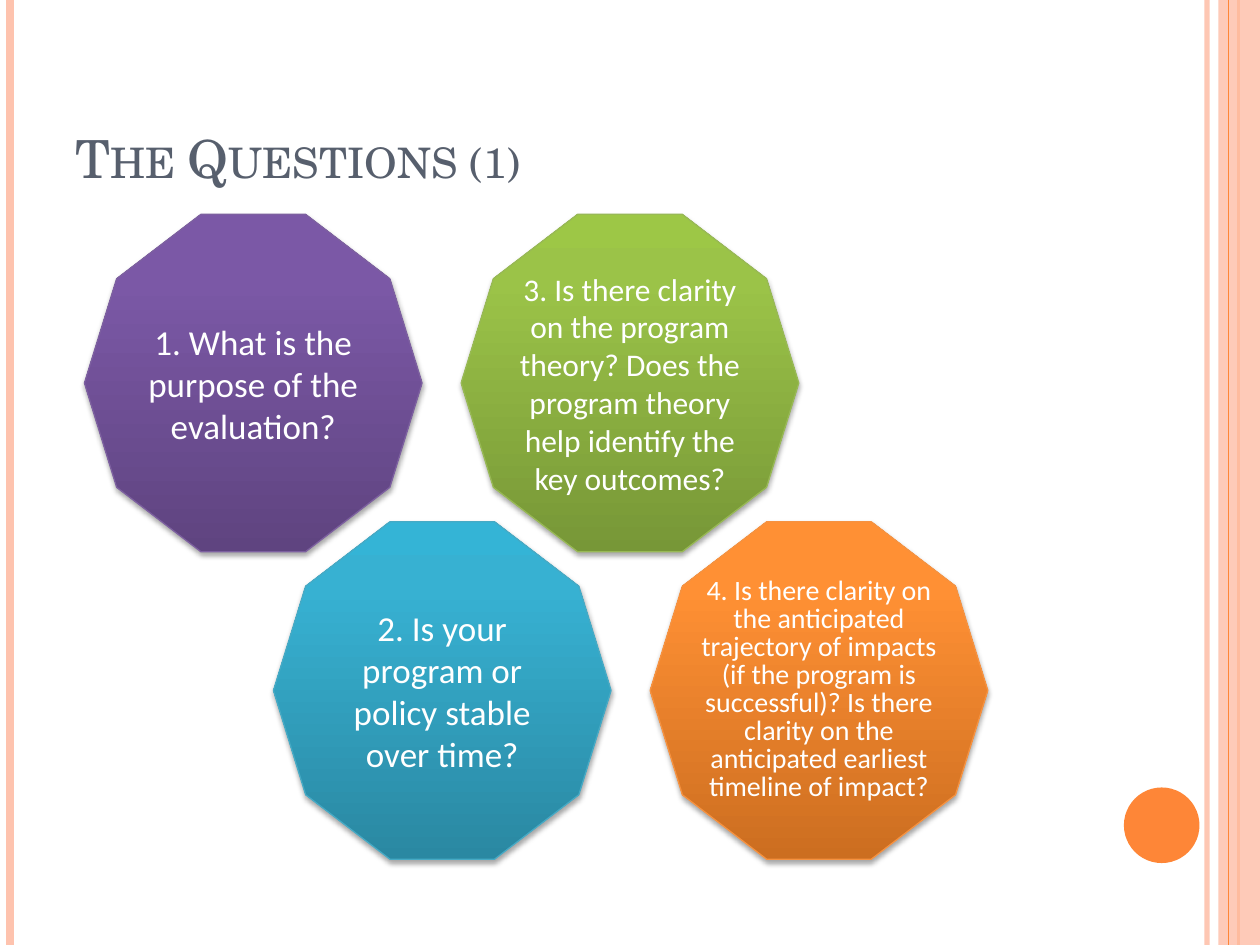
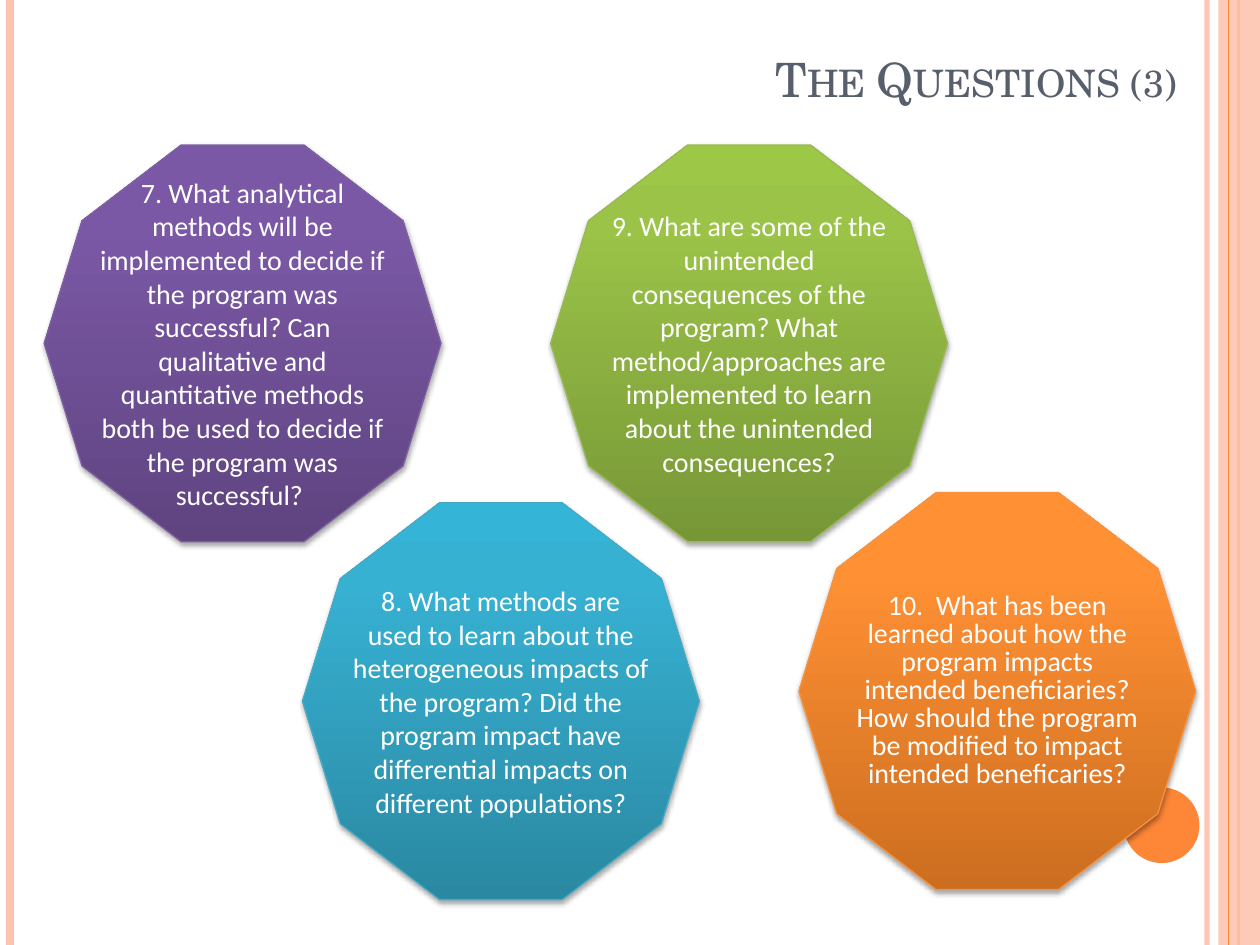
from lxml import etree
from pptx import Presentation
from pptx.dml.color import RGBColor
from pptx.enum import shapes, text
from pptx.oxml import ns
from pptx.util import Inches, Pt

PEACH = RGBColor(0xFE, 0xC3, 0xAE)
ORANGE = RGBColor(0xFE, 0x86, 0x37)
SLATE = RGBColor(0x57, 0x5F, 0x6D)
WHITE = RGBColor(0xFF, 0xFF, 0xFF)
BLACK = RGBColor(0, 0, 0)

STOPS = (0, 80, 100)
TONES = {
    "purple": ("5F4480", "7B58A6", "7C57A8", "7D60A0"),
    "green": ("779737", "9BC348", "9DC746", "98B955"),
    "teal": ("2A88A2", "37B1D2", "34B4D6", "46AAC5"),
    "amber": ("CC6E20", "FF9034", "FF9136", "F69240"),
}
TONES = {name: [RGBColor.from_string(c) for c in tone] for name, tone in TONES.items()}

# Each question: tone, left, top, text size, exact line spacing, wording.
FIRST = [
    ("purple", 0.67, 1.7, 20, None, "1. What is the purpose of the evaluation?"),
    ("green", 3.66, 1.7, 18, None,
     "3. Is there clarity on the program theory? Does the program theory help "
     "identify the key outcomes?"),
    ("teal", 2.17, 4.14, 20, None, "2. Is your program or policy stable over time?"),
    ("amber", 5.16, 4.14, 16, 16,
     "4. Is there clarity on the anticipated trajectory of impacts (if the program "
     "is successful)? Is there clarity on the anticipated earliest timeline of impact?"),
]
THIRD = [
    ("purple", 0.35, 1.15, 16, None,
     "7. What analytical methods will be implemented to decide if the program was "
     "successful? Can qualitative and quantitative methods both be used to decide if "
     "the program was successful? "),
    ("green", 4.37, 1.15, 16, None,
     "9. What are some of the unintended consequences of the program? What "
     "method/approaches are implemented to learn about the unintended consequences?"),
    ("teal", 2.4, 3.99, 16, None,
     "8. What methods are used to learn about the heterogeneous impacts of the "
     "program? Did the program impact have differential impacts on different "
     "populations?"),
    ("amber", 6.34, 3.91, 16, 16,
     "10.  What has been learned about how the program impacts intended "
     "beneficiaries? How should the program be modified to impact intended "
     "beneficaries?"),
]


def node(parent, tag, **attrs):
    """Add a drawing element with its attributes."""
    child = etree.SubElement(parent, ns.qn("a:" + tag))
    for key, value in attrs.items():
        child.set(key, str(value))
    return child


def fade(item, percent):
    """Set the opacity of the first colour in an element."""
    node(next(item.iter(ns.qn("a:srgbClr"))), "alpha", val=percent * 1000)


def rule(slide, x, color, width, solid=100):
    """Draw a full-height vertical line."""
    line = slide.shapes.add_connector(
        shapes.MSO_CONNECTOR.STRAIGHT, Inches(x), 0, Inches(x), Inches(7.5))
    line.line.color.rgb = color
    line.line.width = Pt(width)
    node(line._element.spPr, "effectLst")
    if solid < 100:
        fade(line._element.spPr, solid)


def plain(slide, kind, box, color):
    """Draw a flat shape without outline."""
    shape = slide.shapes.add_shape(kind, *map(Inches, box))
    shape.shadow.inherit = False
    shape.fill.solid()
    shape.fill.fore_color.rgb = color
    shape.line.fill.background()
    return shape


def frame(slide):
    """Draw the side bands and the dot shared by all slides."""
    rule(slide, 9.58, PEACH, 3, 93)
    rule(slide, 0.08, PEACH, 4.5)
    rule(slide, 9.83, ORANGE, 1.5)
    band = plain(slide, shapes.MSO_SHAPE.RECTANGLE, (9.67, 0, 0.33, 7.5), PEACH)
    fade(band._element.spPr, 87)
    rule(slide, 9.75, ORANGE, 0.75)
    plain(slide, shapes.MSO_SHAPE.OVAL, (8.92, 6.25, 0.6, 0.6), ORANGE)


def write(shape, words, font, size, color, anchor):
    """Put one styled run in a shape and return its paragraph and run."""
    body = shape.text_frame
    body.word_wrap = True
    body.vertical_anchor = anchor
    para = body.paragraphs[0]
    run = para.add_run()
    run.text = words
    run.font.name = font
    run.font.size = Pt(size)
    run.font.color.rgb = color
    return para, run


def title(slide, box, words, size):
    """Write the small-caps title."""
    area = slide.shapes.add_textbox(*map(Inches, box))
    _, run = write(area, words, "TeX Gyre Schola", size, SLATE, text.MSO_ANCHOR.BOTTOM)
    run._r.get_or_add_rPr().set("cap", "small")


def shade(shape, colors):
    """Fill a shape with a gradient rising from the bottom."""
    shape.fill.solid()
    props = shape._element.spPr
    grad = etree.Element(ns.qn("a:gradFill"), rotWithShape="1")
    props.replace(props.find(ns.qn("a:solidFill")), grad)
    stops = node(grad, "gsLst")
    for place, color in zip(STOPS, colors):
        node(node(stops, "gs", pos=place * 1000), "srgbClr", val=color)
    node(grad, "lin", ang=270 * 60000, scaled=0)


def drop(shape):
    """Give a shape a soft shadow below it."""
    shape.shadow.inherit = False
    effects = shape._element.spPr.find(ns.qn("a:effectLst"))
    cast = node(effects, "outerShdw", blurRad=Pt(3.1), dist=Pt(1.8),
                dir=90 * 60000, rotWithShape=0)
    node(cast, "srgbClr", val=BLACK)
    fade(cast, 35)


def query(slide, side, tone, left, top, size, pitch, words):
    """Draw one decagon with its question."""
    shape = slide.shapes.add_shape(
        shapes.MSO_SHAPE.DECAGON, *map(Inches, (left, top, side, side)))
    *colors, edge = TONES[tone]
    shade(shape, colors)
    shape.line.color.rgb = edge
    shape.line.width = Pt(0.75)
    drop(shape)
    para, _ = write(shape, words, "Calibri", size, WHITE, text.MSO_ANCHOR.MIDDLE)
    para.alignment = text.PP_ALIGN.CENTER
    if pitch:
        para.line_spacing = Pt(pitch)


def page(deck, head, box, size, side, items):
    """Build one slide of questions."""
    slide = deck.slides.add_slide(deck.slide_layouts[6])
    frame(slide)
    title(slide, box, head, size)
    for item in items:
        query(slide, side, *item)


def main():
    """Build and save the deck."""
    deck = Presentation()
    deck.slide_width, deck.slide_height = Inches(10), Inches(7.5)
    page(deck, "The Questions (1)", (0.5, 0.3, 8.17, 1.25), 30, 2.68, FIRST)
    page(deck, "The Questions (3)", (6.06, 0.13, 3.75, 0.77), 27, 3.15, THIRD)
    deck.save("out.pptx")


if __name__ == "__main__":
    main()
